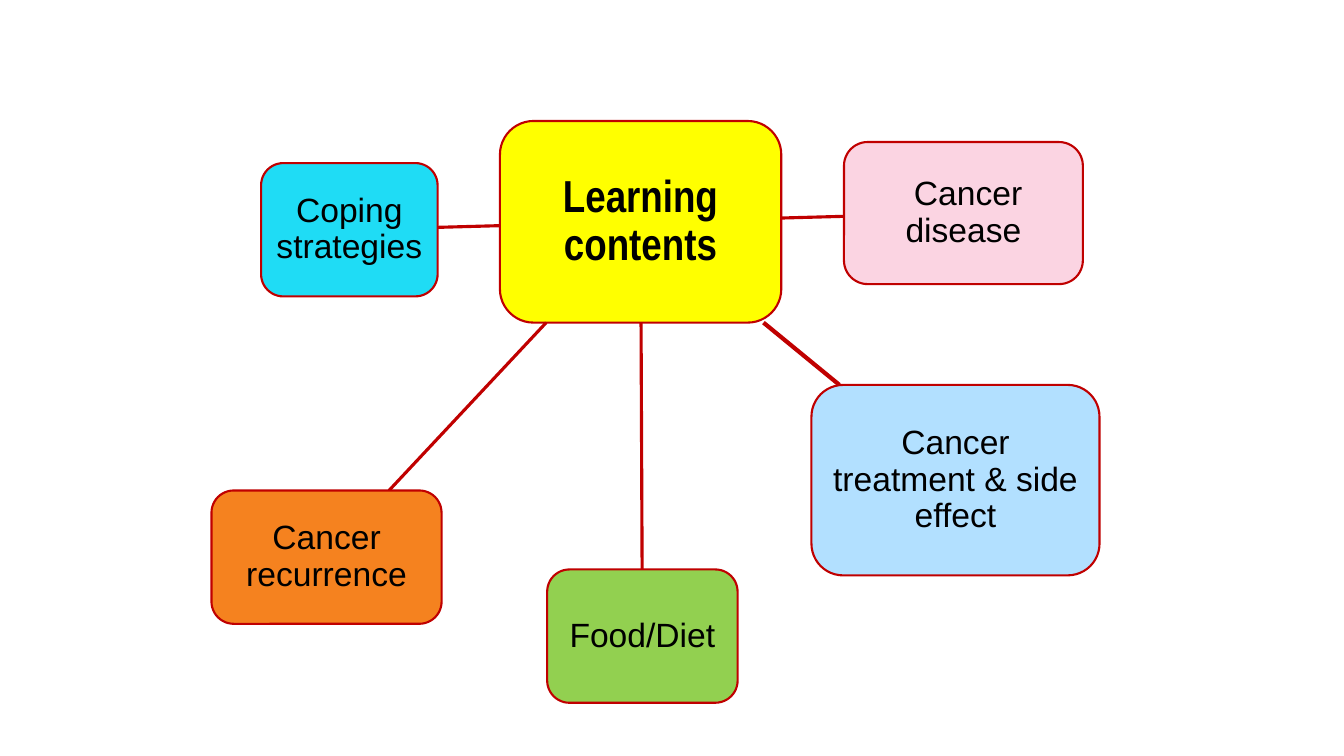
from lxml import etree
from pptx import Presentation
from pptx.dml.color import RGBColor
from pptx.enum import shapes, text
from pptx.oxml import ns
from pptx.util import Cm, Pt

RED = RGBColor(0xC0, 0x00, 0x00)
BLACK = RGBColor(0x00, 0x00, 0x00)
YELLOW = RGBColor(0xFF, 0xFF, 0x00)
PINK = RGBColor(0xFB, 0xD4, 0xE2)
SKY = RGBColor(0xB2, 0xE0, 0xFF)
GREEN = RGBColor(0x92, 0xD0, 0x50)
ORANGE = RGBColor(0xF5, 0x82, 0x1F)
CYAN = RGBColor(0x1F, 0xDC, 0xF5)

# Boxes are left, top, width, height in centimetres.
HUB_BOX = (12.6, 3.05, 7.09, 5.08)
# Topic text, box, fill, spoke width in points
TOPICS = [
    (" Cancer disease", (21.27, 3.58, 6.02, 3.58), PINK, 2.25),
    ("Cancer treatment & side effect", (20.45, 9.7, 7.26, 4.8), SKY, 3),
    ("Food/Diet", (13.79, 14.35, 4.8, 3.36), GREEN, 2.25),
    ("Cancer recurrence", (5.33, 12.36, 5.8, 3.36), ORANGE, 2.25),
    ("Coping strategies", (6.58, 4.11, 4.45, 3.36), CYAN, 2.25),
]


def center(box):
    left, top, width, height = box
    return left + width / 2, top + height / 2


def edge_toward(box, target):
    """Return the point where the line to the target's center leaves the box."""
    (x, y), (target_x, target_y) = center(box), center(target)
    run, rise = target_x - x, target_y - y
    share = 0.5 / max(abs(run) / box[2], abs(rise) / box[3])
    return x + run * share, y + rise * share


def write_text(frame, words, *, size, font="Arial", bold=False, inset=0.17):
    frame.word_wrap = True
    frame.vertical_anchor = text.MSO_ANCHOR.MIDDLE
    frame.margin_left = frame.margin_right = Cm(inset)
    frame.margin_top = frame.margin_bottom = Cm(inset)
    para = frame.paragraphs[0]
    para.alignment = text.PP_ALIGN.CENTER
    para.line_spacing = 0.9
    span = para.add_run()
    span.text = words
    span.font.name = font
    span.font.size = Pt(size)
    span.font.bold = bold
    span.font.color.rgb = BLACK


def add_node(page, box, words, fill, **text_format):
    node = page.shapes.add_shape(
        shapes.MSO_SHAPE.ROUNDED_RECTANGLE, *(Cm(length) for length in box))
    node.shadow.inherit = False
    node.fill.solid()
    node.fill.fore_color.rgb = fill
    node.line.color.rgb = RED
    node.line.width = Pt(1.5)
    write_text(node.text_frame, words, **text_format)


def add_spoke(page, hub, box, width):
    ends = edge_toward(hub, box) + edge_toward(box, hub)
    spoke = page.shapes.add_connector(
        shapes.MSO_CONNECTOR.STRAIGHT, *(Cm(length) for length in ends))
    spoke.line.color.rgb = RED
    spoke.line.width = Pt(width)
    etree.SubElement(spoke._element.spPr, ns.qn("a:effectLst"))


def add_mind_map(page, hub):
    add_node(page, hub, "Learning contents", YELLOW,
             size=32, font="Arial Narrow", bold=True, inset=0.23)
    for words, box, fill, spoke_width in TOPICS:
        add_spoke(page, hub, box, spoke_width)
        add_node(page, box, words, fill, size=24)


def main():
    deck = Presentation()
    deck.slide_width, deck.slide_height = Cm(33.87), Cm(19.05)
    page = deck.slides.add_slide(deck.slide_layouts[6])
    add_mind_map(page, HUB_BOX)
    deck.save("out.pptx")


if __name__ == "__main__":
    main()
